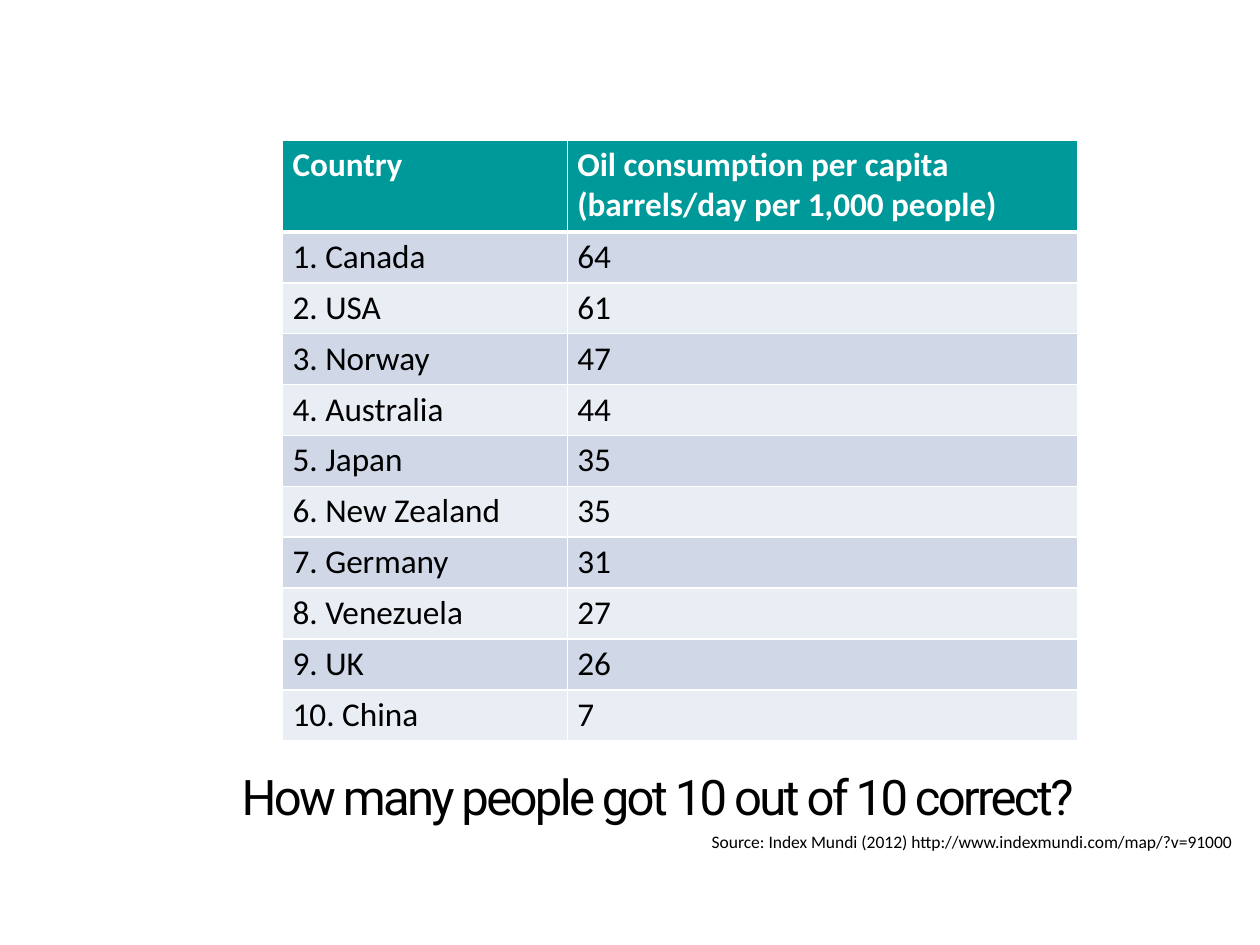
from lxml.etree import SubElement
from pptx import Presentation
from pptx.dml.color import RGBColor
from pptx.oxml.ns import qn
from pptx.util import Pt

HEADINGS = ("Country", "Oil consumption per capita\n(barrels/day per 1,000 people)")
CONSUMPTION = [
    ("Canada", 64),
    ("USA", 61),
    ("Norway", 47),
    ("Australia", 44),
    ("Japan", 35),
    ("New Zealand", 35),
    ("Germany", 31),
    ("Venezuela", 27),
    ("UK", 26),
    ("China", 7),
]
COLUMN_WIDTHS = (162.7, 291.6)
HEADER_HEIGHT = 52.5
ROW_HEIGHT = 29.1
HEADER_FILL = "009999"
BAND_FILLS = ("D0D8E8", "E9EDF4")
HEADER_FONT = {"name": "Calibri", "size": Pt(19), "bold": True}
BODY_FONT = {"name": "Calibri", "size": Pt(19), "bold": False}


def color(value):
    return RGBColor.from_string(value)


def set_format(target, values):
    for name, value in values.items():
        setattr(target, name, value)


def write_text(frame, text, font, font_color):
    frame.text = text
    for paragraph in frame.paragraphs:
        for span in paragraph.runs:
            set_format(span.font, font)
            span.font.color.rgb = color(font_color)


def add_text(page, left, top, width, height, text, font):
    box = page.shapes.add_textbox(Pt(left), Pt(top), Pt(width), Pt(height))
    box.text_frame.word_wrap = True
    write_text(box.text_frame, text, font, "000000")
    return box.text_frame.paragraphs[0]


def add_border(properties, side, width):
    line = SubElement(properties, qn(f"a:{side}"), w=str(Pt(width)))
    fill = SubElement(line, qn("a:solidFill"))
    SubElement(fill, qn("a:srgbClr"), val="FFFFFF")


def style_cell(cell, row):
    set_format(cell, {
        "margin_left": Pt(5.76), "margin_right": Pt(5.76),
        "margin_top": Pt(2.88), "margin_bottom": Pt(2.88),
    })
    properties = cell._tc.get_or_add_tcPr()
    widths = {"lnL": 1, "lnR": 1, "lnT": 3 if row == 1 else 1, "lnB": 3 if row == 0 else 1}
    for side, width in widths.items():
        add_border(properties, side, width)
    cell.fill.solid()
    cell.fill.fore_color.rgb = color(BAND_FILLS[(row - 1) % 2] if row else HEADER_FILL)


def add_consumption_table(page, left, top):
    countries = [
        (f"{rank}. {country}", str(barrels))
        for rank, (country, barrels) in enumerate(CONSUMPTION, 1)
    ]
    rows = [HEADINGS] + countries
    height = HEADER_HEIGHT + ROW_HEIGHT * len(countries)
    table = page.shapes.add_table(
        len(rows), len(HEADINGS), Pt(left), Pt(top), Pt(sum(COLUMN_WIDTHS)), Pt(height)
    ).table
    for column, width in zip(table.columns, COLUMN_WIDTHS):
        column.width = Pt(width)
    for row, texts in enumerate(rows):
        table.rows[row].height = Pt(ROW_HEIGHT if row else HEADER_HEIGHT)
        for column, text in enumerate(texts):
            cell = table.cell(row, column)
            style_cell(cell, row)
            font, font_color = (BODY_FONT, "000000") if row else (HEADER_FONT, "FFFFFF")
            write_text(cell.text_frame, text, font, font_color)


def main():
    deck = Presentation()
    set_format(deck, {"slide_width": Pt(720), "slide_height": Pt(540)})
    page = deck.slides.add_slide(deck.slide_layouts[6])
    question = add_text(
        page, 131, 436.3, 558, 54.7, "How many people got 10 out of 10 correct?",
        {"name": "Roboto", "size": Pt(28)},
    )
    question.line_spacing = Pt(32)
    question.runs[0].font._element.set("spc", "-150")
    add_text(
        page, 399.6, 471.6, 510.5, 19.4,
        "Source: Index Mundi (2012) http://www.indexmundi.com/map/?v=91000",
        {"name": "Calibri", "size": Pt(10)},
    )
    add_consumption_table(page, 161.5, 80)
    deck.save("out.pptx")


if __name__ == "__main__":
    main()
